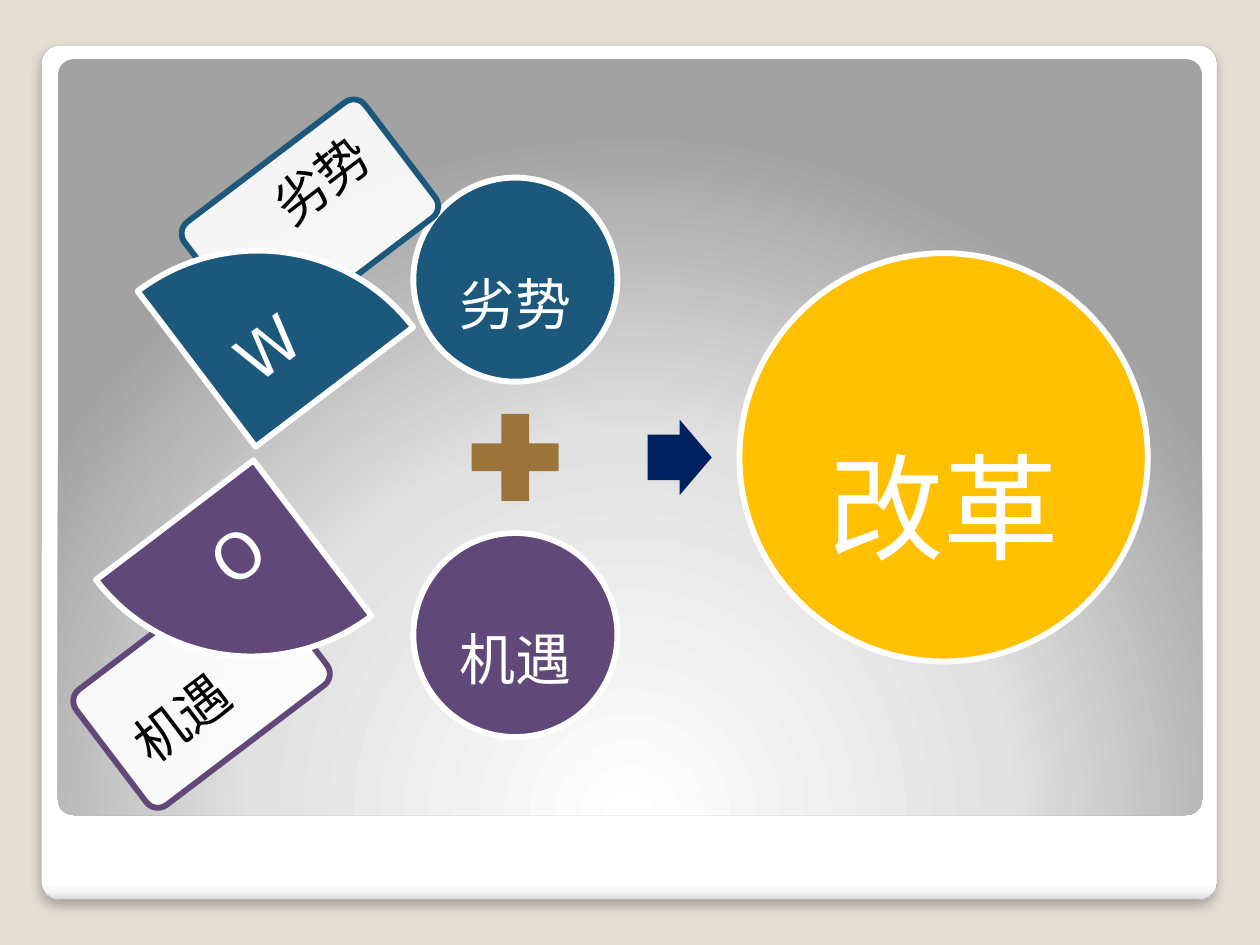
from dataclasses import dataclass
from typing import Optional

from lxml import etree
from pptx import Presentation
from pptx import util as u
from pptx.dml.color import RGBColor
from pptx.enum import shapes, text
from pptx.oxml.ns import qn

COLORS = {
    "background": "E3DED1", "white": "FFFFFF", "black": "000000",
    "edge": "A4A4A4", "weakness": "1B587C", "opportunity": "604878",
    "plus": "9A743A", "arrow": "002060", "reform": "FFC000",
}
FONT = "DejaVu Sans"
TILT = 322.8
OUTLINE = 3.35
KIND = shapes.MSO_SHAPE


@dataclass
class Box:
    x: float
    y: float
    w: float
    h: float
    rot: float = 0


@dataclass
class Label:
    text: str
    size: float
    color: str = "white"
    spacing: float = 0.9
    after: float = 0
    inset: Optional[float] = None
    hanging: float = 0
    anchor: text.MSO_ANCHOR = text.MSO_ANCHOR.MIDDLE


@dataclass
class Factor:
    """One SWOT factor: its circle, and its tilted card with a wedge."""
    name: str
    letter: str
    color: str
    circle_y: float
    card: tuple[float, float]
    card_label: tuple[float, float]
    wedge: tuple[float, float]
    wedge_rot: float
    wedge_label: tuple[float, float]


FACTORS = [
    Factor("机遇", "O", "opportunity", 304.6, (50.4, 351.4), (62.6, 383.8),
           (77.8, 285.1), 232.8, (97.2, 279.4)),
    Factor("劣势", "W", "weakness", 101.5, (112.3, 84.2), (142.6, 76.3),
           (101.5, 120.2), 52.8, (114.5, 160.6)),
]


def rgb(name: str) -> RGBColor:
    return RGBColor.from_string(COLORS[name])


def child(parent, tag: str, **attrs):
    return etree.SubElement(parent, qn(tag), {k: str(v) for k, v in attrs.items()})


def write(sp, label: Label) -> None:
    tf = sp.text_frame
    tf.word_wrap = True
    tf.vertical_anchor = label.anchor
    if label.inset is not None:
        for side in ("left", "right", "top", "bottom"):
            setattr(tf, f"margin_{side}", u.Pt(label.inset))
    p = tf.paragraphs[0]
    formats = {"alignment": text.PP_ALIGN.CENTER, "line_spacing": label.spacing,
               "space_after": u.Pt(label.after)}
    for key, value in formats.items():
        setattr(p, key, value)
    if label.hanging:
        p.level = 1
        pPr = p._p.get_or_add_pPr()
        pPr.set("marL", str(u.Pt(label.hanging)))
        pPr.set("indent", str(-u.Pt(label.hanging)))
    r = p.add_run()
    r.text = label.text
    for key, value in {"name": FONT, "size": u.Pt(label.size)}.items():
        setattr(r.font, key, value)
    r.font.color.rgb = rgb(label.color)
    child(r._r.get_or_add_rPr(), "a:ea", typeface=FONT)


def add_shape(s, kind: KIND, box: Box, fill: Optional[str] = None,
              line: Optional[str] = None, width: float = OUTLINE,
              label: Optional[Label] = None):
    sp = s.shapes.add_shape(kind, *map(u.Pt, (box.x, box.y, box.w, box.h)))
    sp.rotation = box.rot
    sp.shadow.inherit = False
    if fill:
        sp.fill.solid()
        sp.fill.fore_color.rgb = rgb(fill)
    if line:
        sp.line.color.rgb = rgb(line)
        sp.line.width = u.Pt(width)
    else:
        sp.line.fill.background()
    if label:
        write(sp, label)
    return sp


def add_label(s, box: Box, label: Label) -> None:
    tb = s.shapes.add_textbox(*map(u.Pt, (box.x, box.y, box.w, box.h)))
    tb.rotation = box.rot
    write(tb, label)


def set_gradient(sp, stops: list[tuple[int, str]], radial: bool = False) -> None:
    """Fill from top to bottom, or in circles around a point below the shape."""
    sp.fill.gradient()
    grad = sp._element.spPr.find(qn("a:gradFill"))
    for old in list(grad):
        grad.remove(old)
    gs_list = child(grad, "a:gsLst")
    for pos, color in stops:
        child(child(gs_list, "a:gs", pos=pos * 1000), "a:srgbClr", val=color)
    if radial:
        shade = child(grad, "a:path", path="circle")
        child(shade, "a:fillToRect", l=50000, t=175000, r=50000, b=-75000)
    else:
        child(grad, "a:lin", ang=5400000, scaled=0)


def add_backdrop(s) -> None:
    frame = add_shape(s, KIND.ROUNDED_RECTANGLE, Box(23.76, 25.92, 671.76, 488.16),
                      line="edge", width=0.16)
    set_gradient(frame, [(0, "FFFFFF"), (98, "FFFFFF"), (99, "F7F7F7"), (100, "DADADA")])
    effects = frame._element.spPr.find(qn("a:effectLst"))
    shadow = child(effects, "a:outerShdw", blurRad=u.Pt(6), dist=u.Pt(4),
                   dir=5400000, algn="t", rotWithShape=0)
    child(child(shadow, "a:srgbClr", val=COLORS["black"]), "a:alpha", val=25000)
    panel = add_shape(s, KIND.ROUNDED_RECTANGLE, Box(33.1, 33.8, 653.8, 432))
    set_gradient(panel, [(0, "FFFFFF"), (55, "E1E1E1"), (100, "A2A2A2")], radial=True)
    for sp in (frame, panel):
        sp.adjustments[0] = 0.021


def add_equation(s) -> None:
    for f in FACTORS:
        add_shape(s, KIND.OVAL, Box(236.2, f.circle_y, 116.6, 116.6), f.color, "white",
                  label=Label(f.name, 32, spacing=1.7))
    add_shape(s, KIND.MATH_PLUS, Box(260.6, 227.5, 67.7, 67.7), "plus")
    arrow = add_shape(s, KIND.RIGHT_ARROW, Box(370, 239.8, 36.7, 43.2), "arrow")
    arrow.adjustments[0] = 0.6
    add_shape(s, KIND.OVAL, Box(422.6, 144.7, 233.3, 233.3), "reform", "white",
              label=Label("改革", 66, spacing=1.7))


def add_card(s, f: Factor) -> None:
    card = add_shape(s, KIND.ROUNDED_RECTANGLE, Box(*f.card, 129.6, 82.8, TILT),
                     "white", f.color)
    card.adjustments[0] = 0.1
    fill = card._element.spPr.find(qn("a:solidFill"))
    child(fill[0], "a:alpha", val=90000)
    add_label(s, Box(*f.card_label, 86.4, 58.3, TILT),
              Label(f.name, 30, "black", after=4.5, inset=11.5, hanging=22.5,
                    anchor=text.MSO_ANCHOR.TOP))


def add_wedge(s, f: Factor) -> None:
    add_shape(s, KIND.PIE_WEDGE, Box(*f.wedge, 111.6, 113, f.wedge_rot), f.color, "white")
    add_label(s, Box(*f.wedge_label, 79.9, 79.2, TILT),
              Label(f.letter, 36, after=12.6, inset=8))


def main() -> None:
    prs = Presentation()
    prs.slide_width, prs.slide_height = u.Pt(720), u.Pt(540)
    s = prs.slides.add_slide(prs.slide_layouts[6])
    s.background.fill.solid()
    s.background.fill.fore_color.rgb = rgb("background")
    add_backdrop(s)
    add_equation(s)
    for f in FACTORS:
        add_card(s, f)
    for f in FACTORS:
        add_wedge(s, f)
    prs.save("out.pptx")


if __name__ == "__main__":
    main()
